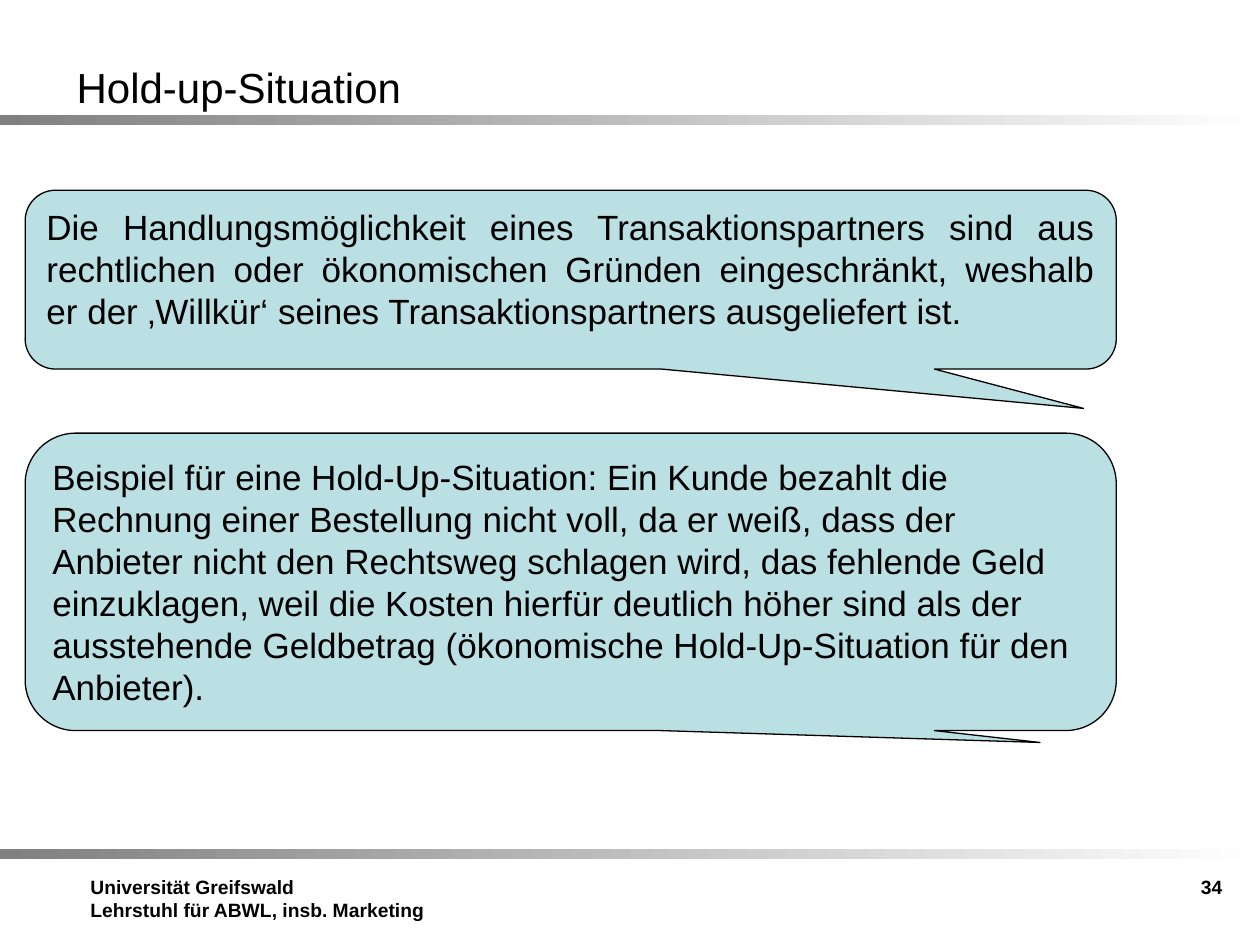
"""Build the slide on the hold-up situation."""
import pptx
import pptx.util
import pptx.dml.color
import pptx.enum.shapes
import pptx.enum.text

Pt = pptx.util.Pt
Kind = pptx.enum.shapes.MSO_SHAPE
Align = pptx.enum.text.PP_ALIGN
Anchor = pptx.enum.text.MSO_ANCHOR

WIDE, HIGH = 720, 540
BARS = [65.5, 485.3]
TEXTS = [
    (["Universität Greifswald", "Lehrstuhl für ABWL, insb. Marketing"],
     (44.6, 496.8, 209.5, 42.5), 11, True, Align.LEFT, Anchor.TOP),
    (["Hold-up-Situation"],
     (36.7, 31.7, 544.3, 36), 24, False, Align.LEFT, Anchor.BOTTOM),
    (["34"], (537.8, 496.8, 167.8, 41), 11, True, Align.RIGHT, Anchor.TOP),
]
CALLS = [
    ("Die Handlungsmöglichkeit eines Transaktionspartners sind aus "
     "rechtlichen oder ökonomischen Gründen eingeschränkt, weshalb er der "
     "‚Willkür‘ seines Transaktionspartners ausgeliefert ist.",
     108.7, 102.2, (0.47, 0.72, 0.17), Align.JUSTIFY, Anchor.TOP),
    ("Beispiel für eine Hold-Up-Situation: Ein Kunde bezahlt die Rechnung "
     "einer Bestellung nicht voll, da er weiß, dass der Anbieter nicht den "
     "Rechtsweg schlagen wird, das fehlende Geld einzuklagen, weil die Kosten "
     "hierfür deutlich höher sind als der ausstehende Geldbetrag "
     "(ökonomische Hold-Up-Situation für den Anbieter).",
     247.5, 170, (0.43, 0.54, 0.17), Align.LEFT, Anchor.MIDDLE),
]


def tint(code):
    return pptx.dml.color.RGBColor.from_string(code)


def write(shape, lines, size, bold, align, anchor):
    frame = shape.text_frame
    frame.word_wrap = True
    frame.vertical_anchor = anchor
    frame.text = "\n".join(lines)
    for para in frame.paragraphs:
        para.alignment = align
        font = para.font
        font.name, font.size, font.bold = "Arial", Pt(size), bold
        font.color.rgb = tint("000000")


def add_bar(slide, top):
    bar = slide.shapes.add_shape(
        Kind.RECTANGLE, Pt(0), Pt(top), Pt(WIDE), Pt(5.8))
    bar.shadow.inherit = False
    bar.line.fill.background()
    bar.fill.gradient()
    bar.fill.gradient_angle = 0
    for stop, place, code in zip(
            bar.fill.gradient_stops, (0, 1), ("808080", "FFFFFF")):
        stop.position = place
        stop.color.rgb = tint(code)


def add_call(slide, text, top, high, shifts, align, anchor):
    call = slide.shapes.add_shape(
        Kind.ROUNDED_RECTANGULAR_CALLOUT,
        Pt(14.4), Pt(top), Pt(623.5), Pt(high))
    for i, shift in enumerate(shifts):
        call.adjustments[i] = shift
    call.shadow.inherit = False
    call.fill.solid()
    call.fill.fore_color.rgb = tint("BBE0E3")
    call.line.color.rgb = tint("000000")
    call.line.width = Pt(0.75)
    write(call, [text], 20, False, align, anchor)


def main():
    deck = pptx.Presentation()
    deck.slide_width, deck.slide_height = Pt(WIDE), Pt(HIGH)
    slide = deck.slides.add_slide(deck.slide_layouts[6])
    for top in BARS:
        add_bar(slide, top)
    for lines, place, *style in TEXTS:
        write(slide.shapes.add_textbox(*map(Pt, place)), lines, *style)
    for call in CALLS:
        add_call(slide, *call)
    deck.save("out.pptx")


if __name__ == "__main__":
    main()
